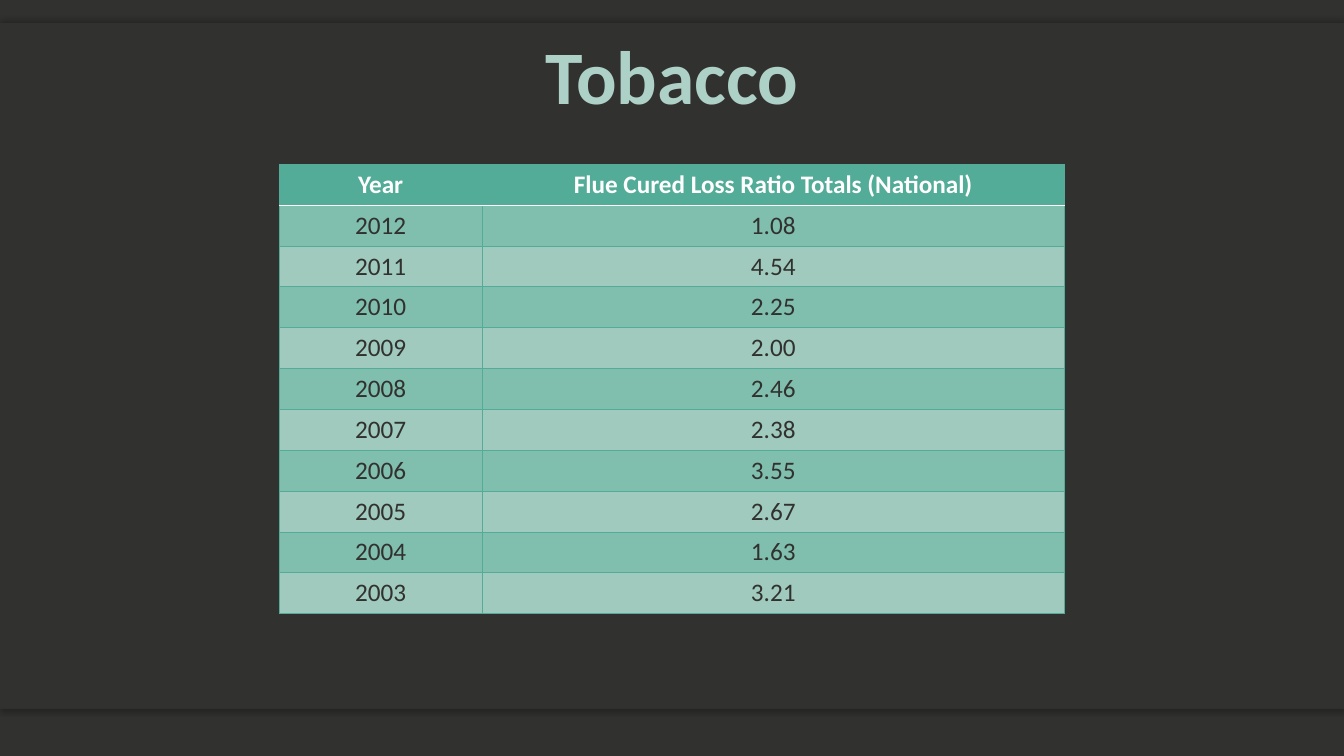
import pptx
import pptx.dml.color
import pptx.enum.shapes
import pptx.enum.text
import pptx.oxml
import pptx.oxml.ns
import pptx.util
from pptx.util import Inches

DARK, GREEN, WHITE = "31312F", "52AC97", "FFFFFF"
BANDS = ["80BEAE", "9FCABD"]
TITLE_COLOR = "ADD0C7"
FONT = "Calibri"
WIDTH, HEIGHT = 13.33, 7.5

HEADER = ("Year", "Flue Cured Loss Ratio Totals (National)")
LOSS_RATIOS = [
    ("2012", "1.08"), ("2011", "4.54"), ("2010", "2.25"), ("2009", "2.00"),
    ("2008", "2.46"), ("2007", "2.38"), ("2006", "3.55"), ("2005", "2.67"),
    ("2004", "1.63"), ("2003", "3.21"),
]


def rgb(color):
    return pptx.dml.color.RGBColor.from_string(color)


def element(xml):
    """Parse a DrawingML element whose root tag ends with the {ns} marker."""
    return pptx.oxml.parse_xml(xml.replace("{ns}", pptx.oxml.ns.nsdecls("a")))


def write(tf, text, size, color, bold):
    p = tf.paragraphs[0]
    p.alignment = pptx.enum.text.PP_ALIGN.CENTER
    r = p.add_run()
    r.text = text
    r.font.name = FONT
    r.font.size = pptx.util.Pt(size)
    r.font.bold = bold
    r.font.color.rgb = rgb(color)


def add_band(s, left, top, width, height, shadow_angle=None):
    sp = s.shapes.add_shape(pptx.enum.shapes.MSO_SHAPE.RECTANGLE, Inches(left),
                            Inches(top), Inches(width), Inches(height))
    sp.shadow.inherit = False
    sp.fill.solid()
    sp.fill.fore_color.rgb = rgb(DARK)
    sp.line.fill.background()
    if shadow_angle is not None:
        effects = sp.element.spPr.find(pptx.oxml.ns.qn("a:effectLst"))
        effects.append(element(
            f'<a:outerShdw {{ns}} blurRad="{pptx.util.Pt(4)}" dist="{pptx.util.Pt(2)}" '
            f'dir="{shadow_angle * 60000}" algn="ctr" rotWithShape="0">'
            '<a:srgbClr val="000000"><a:alpha val="25000"/></a:srgbClr></a:outerShdw>'))


def add_backdrop(s, left, top, width, height):
    edge = 0.49
    add_band(s, left, top + height - edge, width, edge, 90)
    add_band(s, left, top, width, edge, 270)
    add_band(s, left, top, width, height)


def add_title(s, left, top, width, height):
    title = s.shapes.title
    s.shapes.element.append(title.element)  # bring in front of the backdrop
    title.left, title.top = Inches(left), Inches(top)
    title.width, title.height = Inches(width), Inches(height)
    tf = title.text_frame
    tf.word_wrap = True
    tf.auto_size = pptx.enum.text.MSO_AUTO_SIZE.SHAPE_TO_FIT_TEXT
    tf.vertical_anchor = pptx.enum.text.MSO_ANCHOR.MIDDLE
    write(tf, "Tobacco", 54, TITLE_COLOR, True)


def set_borders(cell, **sides):
    """Draw the sides L, R, T and B, each given as (colour, points)."""
    tcPr = cell._tc.get_or_add_tcPr()
    for i, (side, (color, points)) in enumerate(sides.items()):
        tcPr.insert(i, element(
            f'<a:ln{side} {{ns}} w="{pptx.util.Pt(points)}"><a:solidFill>'
            f'<a:srgbClr val="{color}"/></a:solidFill></a:ln{side}>'))


def add_ratio_table(s, left, top, width, height):
    rows = [HEADER] + LOSS_RATIOS
    table = s.shapes.add_table(len(rows), 2, Inches(left), Inches(top),
                               Inches(width), Inches(height)).table
    year_width = 2.01
    table.columns[0].width = Inches(year_width)
    table.columns[1].width = Inches(width - year_width)
    thin, rule = (GREEN, 0.5), (WHITE, 1)
    for i, values in enumerate(rows):
        table.rows[i].height = Inches(height / len(rows))
        header = i == 0
        for j, text in enumerate(values):
            cell = table.cell(i, j)
            write(cell.text_frame, text, 18, WHITE if header else DARK, header)
            cell.fill.solid()
            cell.fill.fore_color.rgb = rgb(GREEN if header else BANDS[(i - 1) % 2])
            set_borders(cell, L=thin, R=thin, T=rule if i == 1 else thin,
                        B=rule if header else thin)


def main():
    prs = pptx.Presentation()
    prs.slide_width, prs.slide_height = Inches(WIDTH), Inches(HEIGHT)
    s = prs.slides.add_slide(prs.slide_layouts[5])
    s.background.fill.solid()
    s.background.fill.fore_color.rgb = rgb(DARK)
    add_backdrop(s, 0, 0.23, WIDTH, 6.8)
    add_title(s, 0, 0.23, WIDTH, 1.01)
    add_ratio_table(s, 2.77, 1.63, 7.79, 4.46)
    prs.save("out.pptx")


if __name__ == "__main__":
    main()
